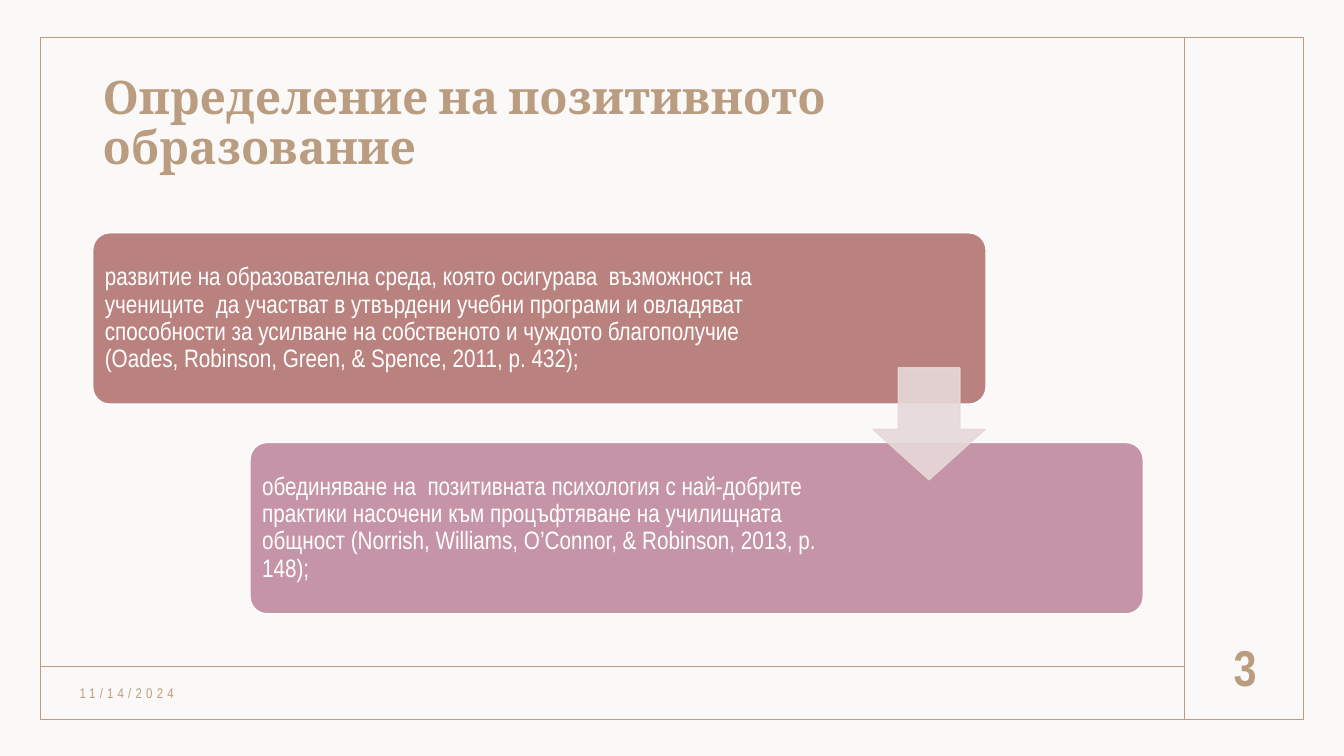
from lxml import etree
from pptx import Presentation
from pptx.dml.color import RGBColor
from pptx.enum.shapes import MSO_CONNECTOR, MSO_SHAPE
from pptx.enum.text import MSO_ANCHOR, PP_ALIGN
from pptx.oxml.ns import qn
from pptx.util import Inches, Pt

TAN, WHITE, ARROW = "BA9C80", "FFFFFF", "E7D8D8"
TITLE = "Определение на позитивното образование"
DATE = "11/14/2024"
NUMBER = "3"
DEFINITIONS = [
    ("развитие на образователна среда, която осигурава  възможност на учениците  да участват "
     "в утвърдени учебни програми и овладяват  способности за усилване на собственото и чуждото "
     "благополучие (Oades, Robinson, Green, & Spence, 2011, p. 432);", "BA827F", 7.09),
    ("обединяване на  позитивната психология с най-добрите практики насочени към процъфтяване "
     "на училищната общност (Norrish, Williams, O’Connor, & Robinson, 2013, p. 148);",
     "C594A6", 6.09),
]
SLIDE_WIDTH, SLIDE_HEIGHT = 13.33, 7.5
FRAME = (0.4, 0.37, 12.53, 6.77)
DIVIDER_X, FOOTER_Y = 11.75, 6.61
CARD_LEFT, CARD_TOP, CARD_WIDTH, CARD_HEIGHT = 0.92, 2.31, 8.86, 1.7
STEP_X, STEP_Y, CARD_PADDING = 1.56, 2.08, 0.05


def set_color(color_format, value, opacity=100):
    color_format.rgb = RGBColor.from_string(value)
    if opacity < 100:
        for color in color_format._xFill.iter(qn("a:srgbClr")):
            etree.SubElement(color, qn("a:alpha"), val=str(opacity * 1000))


def set_fill(fill, value, opacity=100):
    fill.solid()
    set_color(fill.fore_color, value, opacity)


def add_box(kind, box, fill=None, line=None, opacity=100, adjustments=()):
    shape = slide.shapes.add_shape(kind, *map(Inches, box))
    shape.shadow.inherit = False
    for index, value in enumerate(adjustments):
        shape.adjustments[index] = value
    for target, color in ((shape.fill, fill), (shape.line.fill, line)):
        if color:
            set_fill(target, color, opacity)
        else:
            target.background()
    if line:
        shape.line.width = Pt(1)
    return shape


def add_line(start, end):
    connector = slide.shapes.add_connector(
        MSO_CONNECTOR.STRAIGHT, *map(Inches, start + end))
    set_fill(connector.line.fill, TAN)
    connector.line.width = Pt(1)
    etree.SubElement(connector._element.spPr, qn("a:effectLst"))


def add_text(text, box, size, font="Arial Narrow", color=TAN, bold=False,
             align=PP_ALIGN.LEFT, line_spacing=1.0, space_after=0, tracking=0, inset=None):
    frame = slide.shapes.add_textbox(*map(Inches, box)).text_frame
    frame.word_wrap = True
    frame.vertical_anchor = MSO_ANCHOR.MIDDLE
    if inset is not None:
        frame.margin_left = frame.margin_right = Inches(inset)
        frame.margin_top = frame.margin_bottom = Inches(inset)
    paragraph = frame.paragraphs[0]
    paragraph.alignment = align
    paragraph.line_spacing = line_spacing
    paragraph.space_after = Pt(space_after)
    run = paragraph.add_run()
    run.text = text
    run.font.name = font
    run.font.size = Pt(size)
    run.font.bold = bold
    set_fill(run.font.fill, color)
    if tracking:
        run.font._element.set("spc", str(tracking * 100))


presentation = Presentation()
presentation.slide_width = Inches(SLIDE_WIDTH)
presentation.slide_height = Inches(SLIDE_HEIGHT)
slide = presentation.slides.add_slide(presentation.slide_layouts[6])
set_fill(slide.background.fill, WHITE)

full_slide = (0, 0, SLIDE_WIDTH, SLIDE_HEIGHT)
add_box(MSO_SHAPE.RECTANGLE, full_slide, fill=WHITE)
add_box(MSO_SHAPE.RECTANGLE, full_slide, fill=TAN, opacity=5)
add_box(MSO_SHAPE.RECTANGLE, FRAME, line=TAN)

add_text(TITLE, (0.92, 0.64, 10.28, 1.19), 33, font="Cambria", bold=True, line_spacing=0.9)
frame_left, frame_top, frame_width, frame_height = FRAME
add_line((DIVIDER_X, frame_top), (DIVIDER_X, frame_top + frame_height))
add_line((frame_left, FOOTER_Y), (DIVIDER_X, FOOTER_Y))
add_text(DATE, (0.69, 6.72, 3.45, 0.31), 10, space_after=6, tracking=3)
add_text(NUMBER, (11.83, 6.2, 1.04, 0.83), 36, bold=True, align=PP_ALIGN.CENTER, space_after=6)

for index, (text, color, text_width) in enumerate(DEFINITIONS):
    left = CARD_LEFT + index * STEP_X
    top = CARD_TOP + index * STEP_Y
    add_box(MSO_SHAPE.ROUNDED_RECTANGLE, (left, top, CARD_WIDTH, CARD_HEIGHT),
            fill=color, line=WHITE, adjustments=(0.1,))
    add_text(text, (left + CARD_PADDING, top + CARD_PADDING, text_width,
                    CARD_HEIGHT - 2 * CARD_PADDING),
             18, color=WHITE, line_spacing=0.9, space_after=6, inset=0.07)

add_box(MSO_SHAPE.DOWN_ARROW, (8.66, 3.65, 1.11, 1.11), fill=ARROW, line=ARROW,
        opacity=90, adjustments=(0.55, 0.45))

presentation.save("out.pptx")
